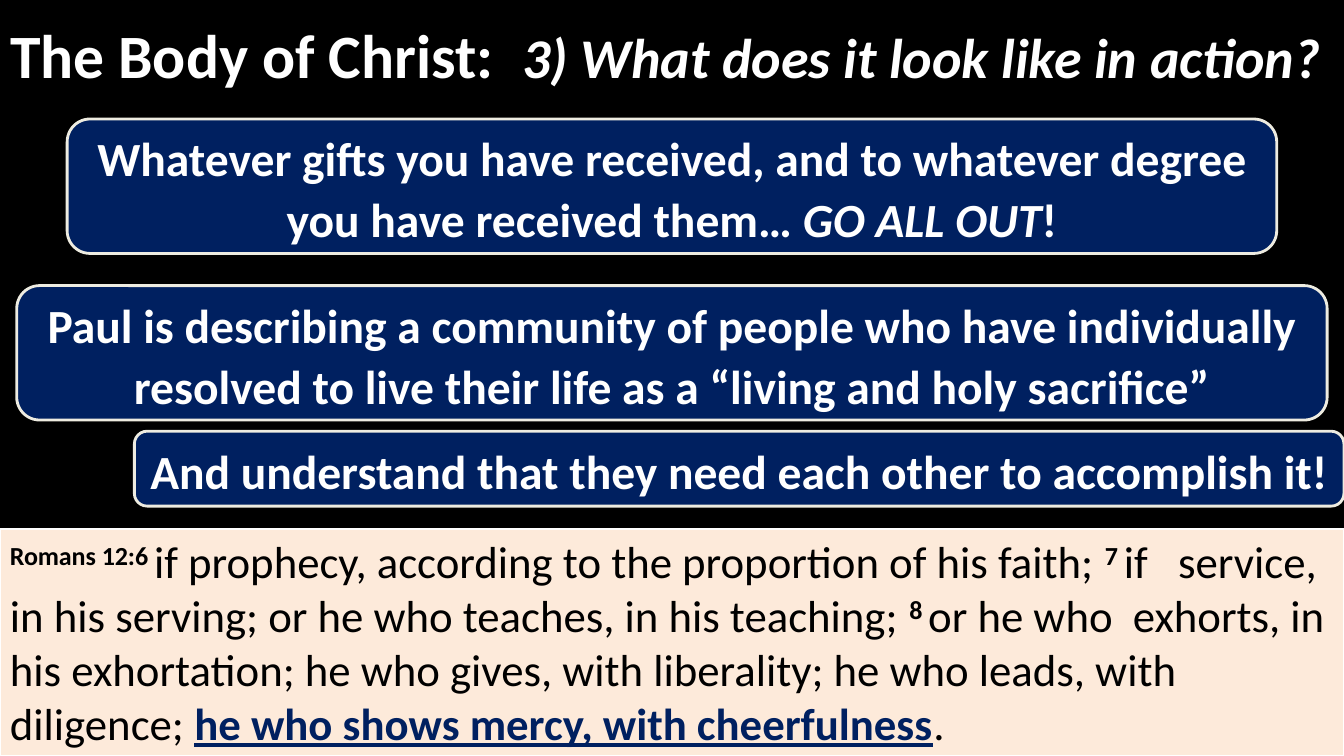
"""Build the slide on what the Body of Christ looks like in action."""
from pptx import Presentation
from pptx.dml.color import RGBColor
from pptx.enum.shapes import MSO_SHAPE
from pptx.enum.text import MSO_ANCHOR, MSO_AUTO_SIZE, PP_ALIGN
from pptx.util import Pt

BLACK = RGBColor(0x00, 0x00, 0x00)
WHITE = RGBColor(0xFF, 0xFF, 0xFF)
NAVY = RGBColor(0x00, 0x20, 0x60)
IVORY = RGBColor(0xEE, 0xEC, 0xE1)
PEACH = RGBColor(0xFD, 0xEA, 0xDA)

SLIDE_WIDTH, SLIDE_HEIGHT = 960, 540
TITLE_HEIGHT = 77
VERSE_TOP = 378
CALLOUT_ADJUSTMENTS = (-0.22, 0.5, 0.17)

TITLE = [
    ("The Body of Christ:  ", {"size": 44}),
    ("3) What does it look like in action?", {"size": 40, "italic": True}),
]
CALLOUTS = [
    ((48, 85, 864, 96), [
        ("Whatever gifts you have received, and to whatever degree you have received them… ", {}),
        ("GO ALL OUT", {"italic": True}),
        ("!", {}),
    ]),
    ((12, 204, 936, 96), [
        ("Paul is describing a community of people who have individually "
         "resolved to live their life as a “living and holy sacrifice”", {}),
    ]),
    ((96, 308, 864, 53.5), [
        ("And understand that they need each other to accomplish it!", {}),
    ]),
]
VERSE_NUMBER = {"bold": True, "baseline": 30}
VERSE = [
    ("Romans 12:6 ", VERSE_NUMBER),
    ("if prophecy, according to the proportion of his faith; ", {}),
    ("7 ", VERSE_NUMBER),
    ("if   service, in his serving; or he who teaches, in his teaching; ", {}),
    ("8 ", VERSE_NUMBER),
    ("or he who  exhorts, in his exhortation; he who gives, with liberality; "
     "he who leads, with diligence; ", {}),
    ("he who shows mercy, with cheerfulness", {"bold": True, "underline": True, "color": NAVY}),
    (".", {}),
]


def add_run(paragraph, text, size=34, color=WHITE, bold=False, italic=False,
            underline=False, baseline=0):
    """Append one formatted run to a paragraph."""
    run = paragraph.add_run()
    run.text = text
    font = run.font
    font.name = "Calibri"
    font.size = Pt(size)
    font.color.rgb = color
    font.bold = bold
    font.italic = italic
    font.underline = underline
    if baseline:
        run._r.get_or_add_rPr().set("baseline", str(baseline * 1000))


def fill_text(shape, runs, alignment=PP_ALIGN.LEFT, anchor=MSO_ANCHOR.MIDDLE,
              line_spacing=1.0, **defaults):
    """Write the runs as the single paragraph of a shape."""
    frame = shape.text_frame
    frame.word_wrap = True
    frame.auto_size = MSO_AUTO_SIZE.NONE
    frame.vertical_anchor = anchor
    paragraph = frame.paragraphs[0]
    paragraph.alignment = alignment
    paragraph.line_spacing = line_spacing
    for text, style in runs:
        add_run(paragraph, text, **{**defaults, **style})


def add_panel(slide, kind, box, fill, line, line_width):
    """Add a filled, outlined shape without a shadow."""
    shape = slide.shapes.add_shape(kind, *(Pt(length) for length in box))
    shape.shadow.inherit = False
    shape.fill.solid()
    shape.fill.fore_color.rgb = fill
    shape.line.color.rgb = line
    shape.line.width = Pt(line_width)
    return shape


def main():
    """Assemble and save the presentation."""
    presentation = Presentation()
    presentation.slide_width = Pt(SLIDE_WIDTH)
    presentation.slide_height = Pt(SLIDE_HEIGHT)
    slide = presentation.slides.add_slide(presentation.slide_layouts[5])
    slide.background.fill.solid()
    slide.background.fill.fore_color.rgb = BLACK

    title = slide.shapes.title
    title.left, title.top = Pt(0), Pt(0)
    title.width, title.height = Pt(SLIDE_WIDTH), Pt(TITLE_HEIGHT)
    title.fill.solid()
    title.fill.fore_color.rgb = BLACK
    fill_text(title, TITLE, bold=True)

    verse_box = (0, VERSE_TOP, SLIDE_WIDTH, SLIDE_HEIGHT - VERSE_TOP)
    verse = add_panel(slide, MSO_SHAPE.RECTANGLE, verse_box, PEACH, WHITE, 1.5)
    fill_text(verse, VERSE, anchor=MSO_ANCHOR.TOP, size=32, color=BLACK)

    for box, runs in CALLOUTS:
        callout = add_panel(slide, MSO_SHAPE.ROUNDED_RECTANGULAR_CALLOUT, box, NAVY, IVORY, 2)
        for index, value in enumerate(CALLOUT_ADJUSTMENTS):
            callout.adjustments[index] = value
        fill_text(callout, runs, alignment=PP_ALIGN.CENTER, line_spacing=1.07, bold=True)

    presentation.save("out.pptx")


if __name__ == "__main__":
    main()
